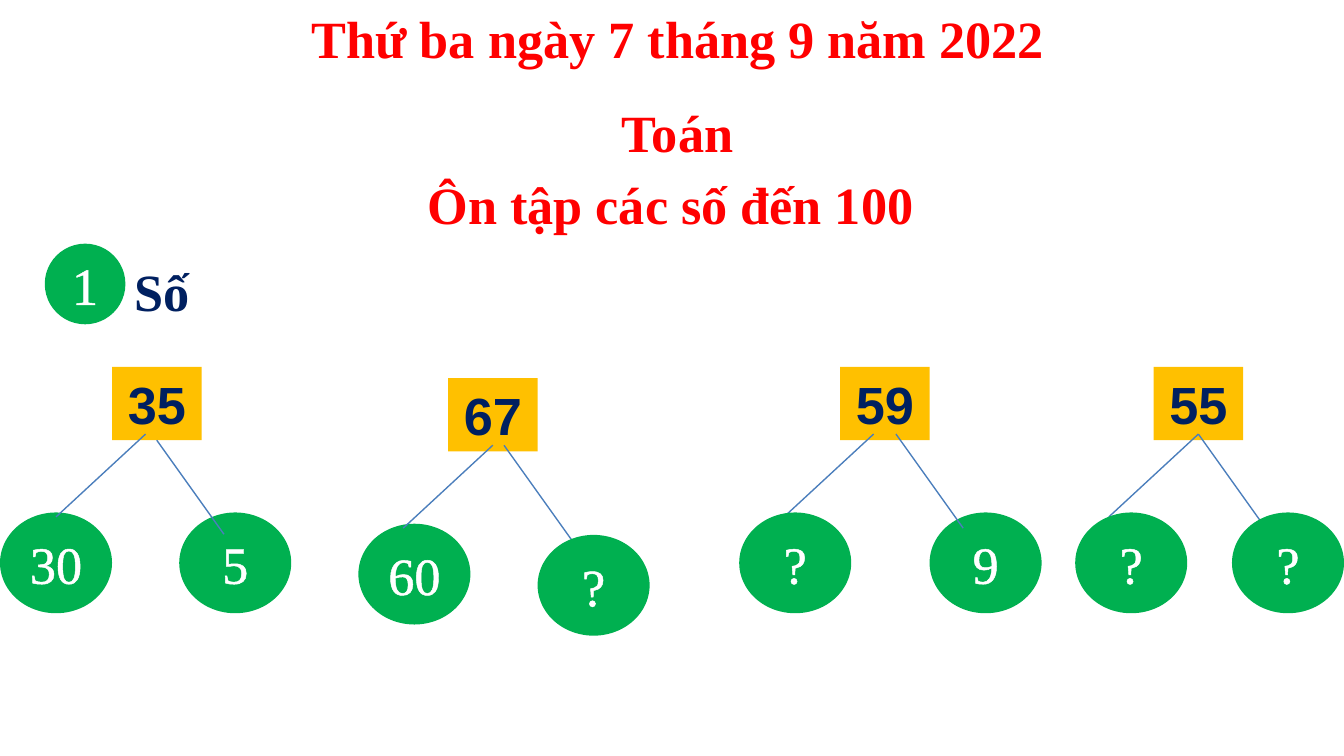
from dataclasses import dataclass
from lxml.etree import SubElement
from pptx import Presentation
from pptx.dml.color import RGBColor
from pptx.enum.shapes import MSO_CONNECTOR, MSO_SHAPE
from pptx.enum.text import MSO_ANCHOR, MSO_AUTO_SIZE, PP_ALIGN
from pptx.oxml import parse_xml
from pptx.oxml.ns import nsdecls, qn
from pptx.util import Inches, Pt


@dataclass(frozen=True)
class Theme:
    red: str = "FF0000"
    navy: str = "002060"
    green: str = "00B050"
    gold: str = "FFC000"
    white: str = "FFFFFF"
    blue: str = "4B7EBC"
    serif: str = "Times New Roman"
    sans: str = "Arial"
    size: float = 28
    limb: float = 0.75
    edge: float = 4.5


THEME = Theme()
WIDE = 10
HIGH = WIDE * 9 / 16
COLS = 120
UNIT = WIDE / COLS


def grid(*cells):
    return [Inches(cell * UNIT) for cell in cells]


def write(shape, text, *, color, font=THEME.serif, bold=True, align=PP_ALIGN.CENTER,
          anchor=MSO_ANCHOR.TOP, wrap=True, grow=True, edge=None, pad=None, space=()):
    frame = shape.text_frame
    frame.word_wrap = wrap
    frame.vertical_anchor = anchor
    frame.auto_size = MSO_AUTO_SIZE.SHAPE_TO_FIT_TEXT if grow else MSO_AUTO_SIZE.NONE
    if pad:
        frame.margin_left = frame.margin_right = Inches(pad[0])
        frame.margin_top = frame.margin_bottom = Inches(pad[1])
    frame.text = text
    for index, line in enumerate(frame.paragraphs):
        line.alignment = align
        if index < len(space):
            line.line_spacing = space[index]
        for run in line.runs:
            run.font.size = Pt(THEME.size)
            run.font.name = font
            run.font.bold = bold
            run.font.color.rgb = RGBColor.from_string(color)
            if edge:
                run._r.get_or_add_rPr().insert(0, parse_xml(
                    f'<a:ln {nsdecls("a")} w="{Pt(THEME.edge)}"><a:solidFill>'
                    f'<a:srgbClr val="{edge}"/></a:solidFill></a:ln>'))


def block(slide, kind, box, fill):
    shape = slide.shapes.add_shape(kind, *grid(*box))
    shape.shadow.inherit = False
    shape.fill.solid()
    shape.fill.fore_color.rgb = RGBColor.from_string(fill)
    shape.line.fill.background()
    return shape


def disc(slide, text, box):
    shape = block(slide, MSO_SHAPE.OVAL, box, THEME.green)
    write(shape, text, color=THEME.white, bold=False, anchor=MSO_ANCHOR.MIDDLE,
          wrap=False, grow=False, edge=THEME.white)


def limb(slide, start, end):
    line = slide.shapes.add_connector(MSO_CONNECTOR.STRAIGHT, *grid(*start, *end))
    line.line.color.rgb = RGBColor.from_string(THEME.blue)
    line.line.width = Pt(THEME.limb)
    SubElement(line._element.spPr, qn("a:effectLst"))


def tree(slide, box, whole, leaves, stems):
    left, top, wide, high = box
    root = block(slide, MSO_SHAPE.RECTANGLE, box, THEME.gold)
    write(root, whole, color=THEME.navy, font=THEME.sans, pad=(0.07, 0.04))
    known = [leaf for leaf in leaves if leaf[0] != "?"]
    blank = [leaf for leaf in leaves if leaf[0] == "?"]
    for text, col, row in known:
        disc(slide, text, (left + col, top + row, 10, 9))
    for (col, row), (run, drop) in zip(stems, ((-8, 7.4), (6, 8.4))):
        x, y = left + col, top + row
        limb(slide, (x, y), (x + run, y + drop))
    for text, col, row in blank:
        disc(slide, text, (left + col, top + row, 10, 9))


def label(slide, text, box, **form):
    write(slide.shapes.add_textbox(*grid(*box)), text, **form)


def header(slide, box):
    left, top, wide, high = box
    label(slide, "Thứ ba ngày 7 tháng 9 năm 2022\nToán", (left, top, wide, 15.4),
          color=THEME.red, space=(1, 1.5))
    label(slide, "Ôn tập các số đến 100", (left + 12, top + 14.8, 46.3, high - 14.8),
          color=THEME.red, align=PP_ALIGN.LEFT, wrap=False)


def task(slide, box):
    left, top, wide, high = box
    disc(slide, "1", (left, top, 7.2, 7.2))
    label(slide, "Số", (left + 6.8, top + 0.75, wide - 6.8, high - 0.75),
          color=THEME.navy, align=PP_ALIGN.JUSTIFY)


def main():
    deck = Presentation()
    deck.slide_width, deck.slide_height = Inches(WIDE), Inches(HIGH)
    slide = deck.slides.add_slide(deck.slide_layouts[6])
    header(slide, (25, 0, 71, 21.6))
    task(slide, (4, 21.76, 16.8, 7.55))
    trees = (
        (10, 32.76, "35", (("30", -10, 13), ("5", 6, 13)), ((3, 6), (4, 6.55))),
        (40, 33.76, "67", (("60", -8, 13), ("?", 8, 14)), ((4, 6), (5, 6))),
        (75, 32.76, "59", (("?", -9, 13), ("9", 8, 13)), ((3, 6), (5, 6))),
        (103, 32.76, "55", (("?", -7, 13), ("?", 7, 13)), ((4, 6), (4, 6))),
    )
    for left, top, whole, leaves, stems in trees:
        tree(slide, (left, top, 8, 6.55), whole, leaves, stems)
    deck.save("out.pptx")


if __name__ == "__main__":
    main()
